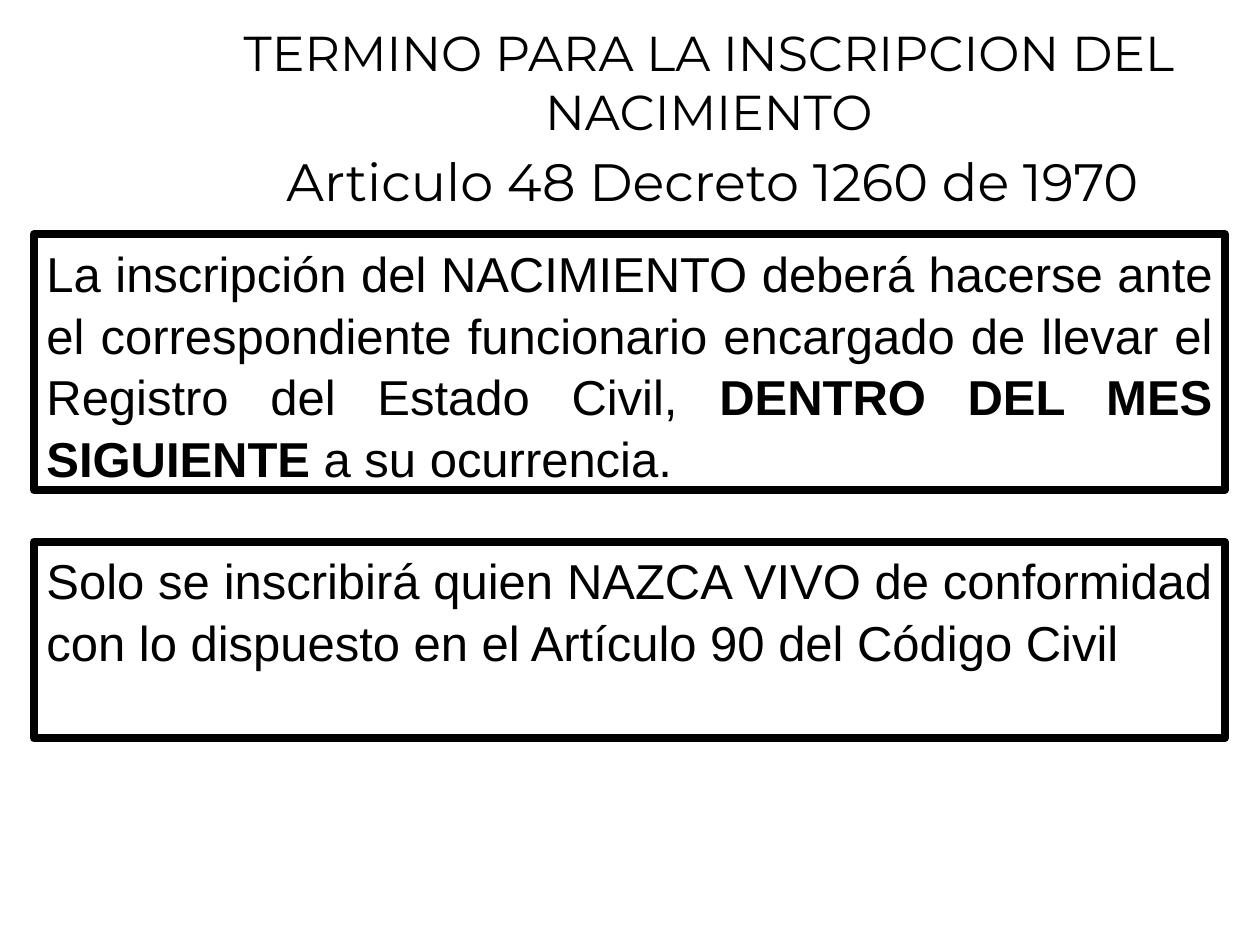
from pptx import Presentation
from pptx.dml.color import RGBColor
from pptx.enum.shapes import MSO_SHAPE as Shape
from pptx.enum.text import MSO_ANCHOR as Anchor, MSO_AUTO_SIZE as Fit, PP_ALIGN as Align
from pptx.util import Inches, Pt

BLACK = RGBColor(0, 0, 0)


class Deck:
    """Hold the text style and the current slide."""

    def __init__(self):
        self.prs = Presentation()
        self.prs.slide_width, self.prs.slide_height = Inches(10), Inches(7.5)
        self.slide = self.prs.slides.add_slide(self.prs.slide_layouts[5])
        self.head, self.body = "Montserrat", "Arial"

    def text(self, shape, runs, font, size, align, anchor=Anchor.TOP, wrap=True, space=1.0):
        frame = shape.text_frame
        frame.auto_size = Fit.NONE
        frame.word_wrap = wrap
        frame.vertical_anchor = anchor
        para = frame.paragraphs[0]
        para.alignment = align
        para.line_spacing = space
        for words, bold in runs:
            run = para.add_run()
            run.text = words
            run.font.name = font
            run.font.size = Pt(size)
            run.font.bold = bold
            run.font.color.rgb = BLACK

    def title(self, words, left, top, width, height):
        shape = self.slide.shapes.title
        shape.left, shape.top = Inches(left), Inches(top)
        shape.width, shape.height = Inches(width), Inches(height)
        self.text(shape, [(words, False)], self.head, 28, Align.CENTER)

    def label(self, words, *area):
        shape = self.slide.shapes.add_textbox(*map(Inches, area))
        self.text(shape, [(words, False)], self.head, 30, Align.CENTER, Anchor.MIDDLE, False)

    def panel(self, runs, *area):
        shape = self.slide.shapes.add_shape(Shape.RECTANGLE, *map(Inches, area))
        shape.shadow.inherit = False
        shape.fill.background()
        shape.line.color.rgb = BLACK
        shape.line.width = Pt(4.5)
        self.text(shape, runs, self.body, 28, Align.JUSTIFY, space=1.05)


def main():
    deck = Deck()
    deck.title("TERMINO PARA LA INSCRIPCION DEL NACIMIENTO", 1.53, 0.13, 8.19, 1.04)
    deck.panel([
        ("La inscripción del NACIMIENTO deberá hacerse ante el correspondiente funcionario "
         "encargado de llevar el Registro del Estado Civil, ", False),
        ("DENTRO DEL MES SIGUIENTE", True),
        (" a su ocurrencia.", False),
    ], 0.27, 1.86, 9.45, 2.03)
    deck.panel([
        ("Solo se inscribirá quien NAZCA VIVO de conformidad con lo dispuesto en el "
         "Artículo 90 del Código Civil", False),
    ], 0.27, 4.3, 9.45, 1.56)
    deck.label("Articulo 48 Decreto 1260 de 1970", 1.68, 1.13, 7.95, 0.6)
    deck.prs.save("out.pptx")


if __name__ == "__main__":
    main()
